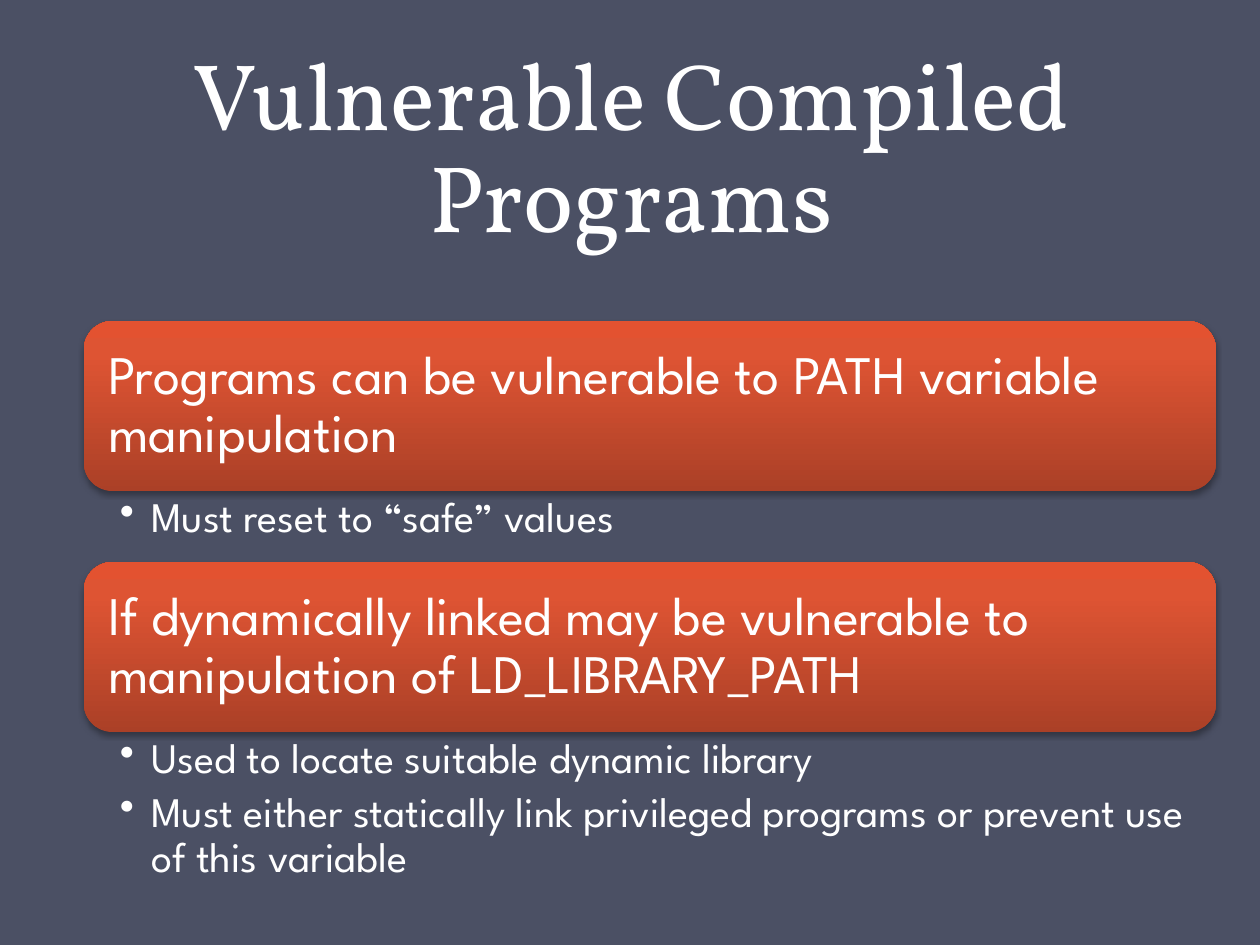
import pptx
import pptx.util
import pptx.dml.color
import pptx.enum.shapes
import pptx.enum.text
import pptx.oxml
import pptx.oxml.ns

PX = 914400 / 126
NAVY = pptx.dml.color.RGBColor(0x4B, 0x50, 0x64)
WHITE = pptx.dml.color.RGBColor(0xFF, 0xFF, 0xFF)
RUST = pptx.dml.color.RGBColor(0xAB, 0x40, 0x27)
ORANGE = pptx.dml.color.RGBColor(0xDE, 0x54, 0x33)
BRIGHT = pptx.dml.color.RGBColor(0xE3, 0x52, 0x30)
STOPS = [(0, RUST), (80, ORANGE), (100, BRIGHT)]
NS = pptx.oxml.ns.nsdecls("a")
ANCHOR = pptx.enum.text.MSO_ANCHOR
ALIGN = pptx.enum.text.PP_ALIGN
LEFT, TOP, WIDTH, BOX_H = 84, 321, 1132, 170
SECTIONS = [
    ("Programs can be vulnerable to PATH variable manipulation", 71,
     ["Must reset to “safe” values"]),
    ("If dynamically linked may be vulnerable to manipulation of LD_LIBRARY_PATH", 164,
     ["Used to locate suitable dynamic library",
      "Must either statically link privileged programs or prevent use of this variable"]),
]


def px(*values):
    return [pptx.util.Emu(round(v * PX)) for v in values]


def write(sp, lines, size, font, margins, anchor, para):
    tf = sp.text_frame
    left, top, right, bottom = px(*margins)
    frame = {"word_wrap": True, "auto_size": pptx.enum.text.MSO_AUTO_SIZE.NONE,
             "vertical_anchor": anchor, "margin_left": left, "margin_top": top,
             "margin_right": right, "margin_bottom": bottom}
    for name, value in frame.items():
        setattr(tf, name, value)
    for i, line in enumerate(lines):
        p = tf.add_paragraph() if i else tf.paragraphs[0]
        for name, value in para.items():
            setattr(p, name, value)
        r = p.add_run()
        r.text = line
        for name, value in {"size": pptx.util.Pt(size), "name": font, "bold": False}.items():
            setattr(r.font, name, value)
        r.font.color.rgb = WHITE
    return tf


prs = pptx.Presentation()
prs.slide_width, prs.slide_height = px(1260, 945)
s = prs.slides.add_slide(prs.slide_layouts[5])
s.background.fill.solid()
s.background.fill.fore_color.rgb = NAVY

title = s.shapes.title
title.left, title.top, title.width, title.height = px(64, 37, 1134, 220)
write(title, ["Vulnerable Compiled Programs"], 54, "Vollkorn", (13, 6, 13, 6), ANCHOR.BOTTOM,
      {"alignment": ALIGN.CENTER, "line_spacing": pptx.util.Pt(58)})

y = TOP
for heading, list_h, bullets in SECTIONS:
    sp = s.shapes.add_shape(pptx.enum.shapes.MSO_SHAPE.ROUNDED_RECTANGLE,
                            *px(LEFT, y, WIDTH, BOX_H))
    sp.fill.gradient()
    sp.fill.gradient_angle = 90
    stops = sp._element.spPr.find(".//" + pptx.oxml.ns.qn("a:gsLst"))
    for stop in list(stops):
        stops.remove(stop)
    for pos, color in STOPS:
        stops.append(pptx.oxml.parse_xml(
            f'<a:gs {NS} pos="{pos * 1000}"><a:srgbClr val="{color}"/></a:gs>'))
    sp.line.fill.background()
    sp.shadow.inherit = False
    sp._element.spPr.find(pptx.oxml.ns.qn("a:effectLst")).append(pptx.oxml.parse_xml(
        f'<a:outerShdw {NS} blurRad="40000" dist="23000" dir="5400000" rotWithShape="0">'
        '<a:srgbClr val="000000"><a:alpha val="35000"/></a:srgbClr></a:outerShdw>'))
    write(sp, [heading], 31, "League Spartan", (16, 16, 16, 16), ANCHOR.MIDDLE,
          {"alignment": ALIGN.LEFT, "line_spacing": 0.9, "space_after": pptx.util.Pt(11)})
    y += BOX_H

    tb = s.shapes.add_textbox(*px(LEFT, y, WIDTH, list_h))
    tf = write(tb, bullets, 24, "League Spartan", (36, 5, 30, 5), ANCHOR.TOP,
               {"level": 1, "line_spacing": 0.9, "space_after": pptx.util.Pt(5)})
    for p in tf.paragraphs:
        pPr = p._p.get_or_add_pPr()
        pPr.set("marL", "228600")
        pPr.set("indent", "-228600")
        pPr.append(pptx.oxml.parse_xml(f'<a:buChar {NS} char="•"/>'))
    y += list_h

prs.save("out.pptx")
